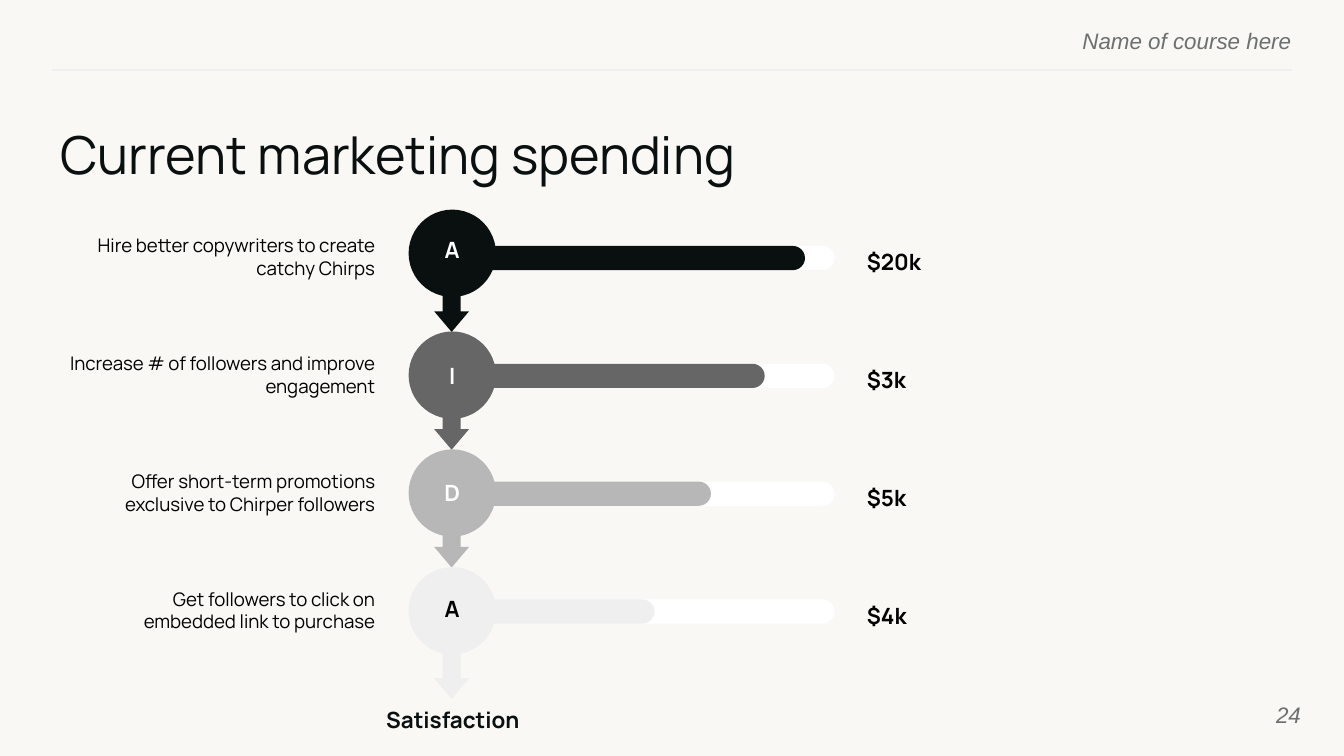
from pptx import Presentation
from pptx.dml.color import RGBColor
from pptx.enum.shapes import MSO_CONNECTOR, MSO_SHAPE as SHAPE
from pptx.enum.text import MSO_ANCHOR as ANCHOR, MSO_AUTO_SIZE as AUTO, PP_ALIGN as ALIGN
from pptx.util import Inches, Pt
from lxml import etree

INK, GREY, PALE, WHITE, BLACK = "09100F", "6C706F", "EFEFEF", "FFFFFF", "000000"
A_NS = "http://schemas.openxmlformats.org/drawingml/2006/main"
STAGES = [
    ("A", INK, WHITE, 2.44, "$20k", 2.16, "Hire better copywriters to create catchy Chirps"),
    ("I", "666666", WHITE, 2.14, "$3k", 2.31, "Increase # of followers and improve engagement"),
    ("D", "B7B7B7", WHITE, 1.74, "$5k", 2.35,
     "Offer short-term promotions exclusive to Chirper followers"),
    ("A", PALE, BLACK, 1.32, "$4k", 2.07, "Get followers to click on embedded link to purchase"),
]


def rgb(value):
    return RGBColor.from_string(value)


def write(s, text, size, color, align=ALIGN.LEFT, font="Manrope", bold=False,
          italic=False, anchor=ANCHOR.MIDDLE, inset=0.02):
    tf = s.text_frame
    tf.word_wrap = True
    tf.auto_size = AUTO.NONE
    tf.vertical_anchor = anchor
    tf.margin_left = tf.margin_right = tf.margin_top = tf.margin_bottom = Inches(inset)
    tf.text = text
    p = tf.paragraphs[0]
    p.alignment = align
    p.font.name = font
    p.font.size = Pt(size)
    p.font.bold = bold
    p.font.italic = italic
    p.font.color.rgb = rgb(color)
    return p


def add_text(shapes, box, text, size, color, **style):
    s = shapes.add_textbox(*map(Inches, box))
    return write(s, text, size, color, **style)


def add_solid(shapes, kind, box, color):
    s = shapes.add_shape(kind, *map(Inches, box))
    s.shadow.inherit = False
    s.fill.solid()
    s.fill.fore_color.rgb = rgb(color)
    s.line.fill.background()
    return s


def add_frame(slide, left, right):
    note = dict(align=ALIGN.RIGHT, font="Arial", italic=True, inset=0)
    add_text(slide.shapes, (right - 3.85, 0.2, 3.85, 0.18), "Name of course here",
             12, GREY, anchor=ANCHOR.TOP, **note)
    rule = slide.shapes.add_connector(
        MSO_CONNECTOR.STRAIGHT, Inches(right), Inches(0.52), Inches(left), Inches(0.52))
    rule.line.color.rgb = rgb(PALE)
    rule.line.width = Pt(0.75)
    etree.SubElement(rule.element.spPr, f"{{{A_NS}}}effectLst")
    add_text(slide.shapes, (9.08, 5.1, 0.6, 0.43), "24", 12, GREY, **note)


def add_title(slide, box, text):
    s = slide.shapes.title
    s.left, s.top, s.width, s.height = map(Inches, box)
    p = write(s, text, 28, INK, anchor=ANCHOR.TOP, inset=0)
    p.space_after = Pt(10)


def add_bar(shapes, left, top, value, color):
    for width, fill in ((2.66, WHITE), (value, color)):
        s = add_solid(shapes, SHAPE.ROUNDED_RECTANGLE, (left, top, width, 0.18), fill)
        s.adjustments[0] = 0.5


def add_arrow(shapes, center_x, center_y, length, color):
    box = (center_x - length / 2, center_y - 0.13, length, 0.26)
    s = add_solid(shapes, SHAPE.RIGHT_ARROW, box, color)
    s.adjustments[0], s.adjustments[1] = 0.51, 0.59
    s.rotation = 90


def add_badge(shapes, left, top, letter, color, font_color, letter_dy):
    group = shapes.add_group_shape().shapes
    add_solid(group, SHAPE.OVAL, (left, top, 0.65, 0.65), color)
    s = add_solid(group, SHAPE.RECTANGLE, (left + 0.24, top + letter_dy, 0.17, 0.3), color)
    p = write(s, letter, 12, font_color, align=ALIGN.CENTER, bold=True)
    p.line_spacing = 0.7


def add_stage(slide, left, top, stage, first, last):
    letter, color, font_color, value, price, text_width, text = stage
    shapes = slide.shapes
    add_bar(shapes, left + 0.51, top, value, color)
    add_text(shapes, (left + 3.39, top - 0.06, 0.89, 0.36), price, 12, BLACK, bold=True)
    add_arrow(shapes, left + 0.32, top + (0.54 if last else 0.49), 0.4 if last else 0.3, color)
    add_text(shapes, (left - 0.23 - text_width, top - 0.13, text_width, 0.42),
             text, 10, BLACK, align=ALIGN.RIGHT)
    badge_top = top - (0.27 if first else 0.24)
    letter_dy = 0.17 if first else 0.18 if last else 0.2
    add_badge(shapes, left, badge_top, letter, color, font_color, letter_dy)


def add_funnel(slide, left, top, height):
    last = len(STAGES) - 1
    for i, stage in enumerate(STAGES):
        add_stage(slide, left, top + height * i / last, stage, i == 0, i == last)
    add_text(slide.shapes, (left - 0.33, top + height + 0.78, 1.32, 0.23), "Satisfaction",
             12, INK, align=ALIGN.CENTER, bold=True)


def main():
    prs = Presentation()
    prs.slide_width, prs.slide_height = Inches(10), Inches(10 * 9 / 16)
    slide = prs.slides.add_slide(prs.slide_layouts[5])
    slide.background.fill.solid()
    slide.background.fill.fore_color.rgb = rgb("F9F8F5")
    add_frame(slide, 0.39, 9.61)
    add_title(slide, (0.45, 0.91, 9.23, 0.51), "Current marketing spending")
    add_funnel(slide, 3.04, 1.83, 2.63)
    prs.save("out.pptx")


if __name__ == "__main__":
    main()
